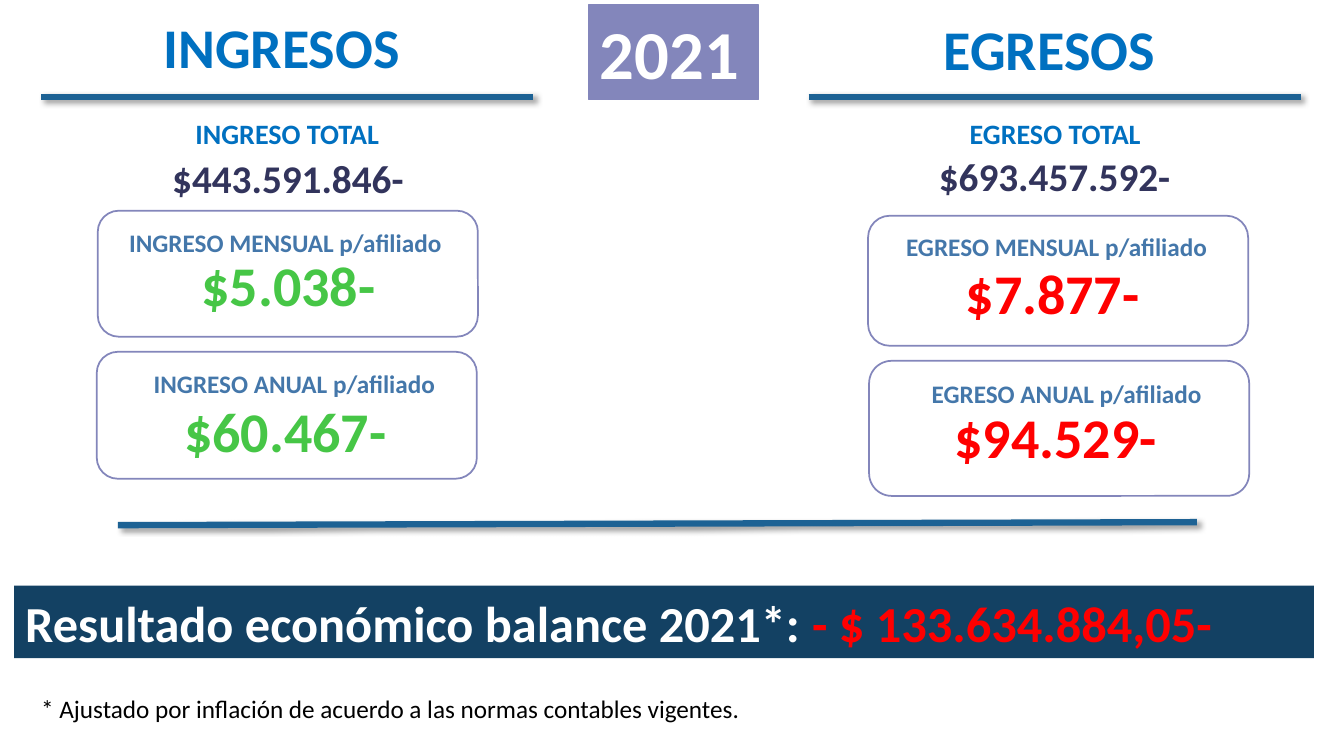
from lxml import etree
from pptx import Presentation
from pptx.dml.color import RGBColor
from pptx.enum.shapes import MSO_CONNECTOR, MSO_SHAPE
from pptx.enum.text import MSO_ANCHOR, MSO_AUTO_SIZE, PP_ALIGN
from pptx.oxml.ns import qn
from pptx.util import Inches, Pt

FONT = "Calibri"
BLUE, NAVY, STEEL, LILAC = "0070C0", "32345C", "4477AA", "8386BB"
RULE, BAND, GREEN, RED = "1D6294", "134163", "46C646", "FF0000"
WHITE, BLACK = "FFFFFF", "000000"
WIDE = (0.11, 0.06)    # horizontal and vertical insets
NARROW = (0.1, 0.05)


def rgb(value):
    return RGBColor.from_string(value)


def write(sp, runs, size, bold=True, align=PP_ALIGN.LEFT, inset=WIDE,
          wrap=True, grow=False):
    """Fill a shape with one paragraph of (text, colour) runs."""
    tf = sp.text_frame
    side, end = (Inches(v) for v in inset)
    frame = {
        "margin_left": side, "margin_right": side,
        "margin_top": end, "margin_bottom": end,
        "word_wrap": wrap, "vertical_anchor": MSO_ANCHOR.TOP,
        "auto_size": MSO_AUTO_SIZE.SHAPE_TO_FIT_TEXT if grow else MSO_AUTO_SIZE.NONE,
    }
    for name, value in frame.items():
        setattr(tf, name, value)
    p = tf.paragraphs[0]
    p.alignment = align
    for text, color in runs:
        r = p.add_run()
        r.text = text
        for name, value in {"name": FONT, "size": Pt(size), "bold": bold}.items():
            setattr(r.font, name, value)
        r.font.color.rgb = rgb(color)


def add_text(shapes, box, text, size, color, **options):
    sp = shapes.add_textbox(*map(Inches, box))
    write(sp, [(text, color)], size, **options)


def add_box(shapes, kind, box, fill=None, line=None, width=0.75):
    sp = shapes.add_shape(kind, *map(Inches, box))
    sp.shadow.inherit = False
    if fill:
        sp.fill.solid()
        sp.fill.fore_color.rgb = rgb(fill)
    else:
        sp.fill.background()
    if line:
        sp.line.color.rgb = rgb(line)
        sp.line.width = Pt(width)
    else:
        sp.line.fill.background()
    return sp


def add_rule(shapes, x1, y1, x2, y2):
    """Thick line with a soft shadow to the lower right."""
    line = shapes.add_connector(MSO_CONNECTOR.STRAIGHT,
                                *map(Inches, (x1, y1, x2, y2)))
    line.line.color.rgb = rgb(RULE)
    line.line.width = Pt(4.5)
    effects = etree.SubElement(line._element.spPr, qn("a:effectLst"))
    shadow = etree.SubElement(effects, qn("a:outerShdw"), blurRad=str(Pt(4)),
                              dist=str(Pt(3)), dir=str(45 * 60000),
                              algn="tl", rotWithShape="0")
    color = etree.SubElement(shadow, qn("a:srgbClr"), val=BLACK)
    etree.SubElement(color, qn("a:alpha"), val="40000")


def add_card(shapes, box, label, label_at, amount, amount_at, color):
    """Rounded outline grouped with a label and an amount."""
    card = shapes.add_group_shape().shapes
    for text, (x, y), height, size, ink in (
            (label, label_at, 0.37, 18, STEEL),
            (amount, amount_at, 0.75, 40, color)):
        add_text(card, (x, y, 5.14, height), text, size, ink,
                 align=PP_ALIGN.CENTER, inset=NARROW)
    add_box(card, MSO_SHAPE.ROUNDED_RECTANGLE, box, line=LILAC, width=1.25)


def add_column(shapes, heading, heading_box, rule_x, total, cards, color):
    """Heading, rule, total and cards of one side of the balance."""
    add_text(shapes, heading_box, heading, 40, BLUE, wrap=False, grow=True)
    add_rule(shapes, rule_x, 0.96, rule_x + 4.88, 0.96)
    label, label_box, amount, amount_box = total
    add_text(shapes, label_box, label, 20, BLUE, align=PP_ALIGN.CENTER)
    add_text(shapes, amount_box, amount, 28, NAVY, align=PP_ALIGN.CENTER)
    for card in cards:
        add_card(shapes, *card, color)


def main():
    prs = Presentation()
    prs.slide_width, prs.slide_height = Inches(13.33), Inches(7.5)
    s = prs.slides.add_slide(prs.slide_layouts[6])

    # Income
    add_column(
        s.shapes, "INGRESOS", (1.51, 0.06, 2.69, 0.79), 0.41,
        ("INGRESO TOTAL", (0.92, 1.1, 3.86, 0.54),
         "$443.591.846-", (0.93, 1.47, 3.85, 0.81)),
        [((0.97, 2.09, 3.77, 1.25), "INGRESO MENSUAL p/afiliado", (0.26, 2.21),
          "$5.038-", (0.29, 2.44)),
         ((0.96, 3.49, 3.77, 1.26), "INGRESO ANUAL p/afiliado", (0.35, 3.6),
          "$60.467-", (0.26, 3.88))],
        GREEN)

    # Expenses
    add_column(
        s.shapes, "EGRESOS", (9.25, 0.08, 2.42, 0.79), 8.02,
        ("EGRESO TOTAL", (8.92, 1.1, 3.09, 0.54),
         "$693.457.592-", (8.61, 1.45, 3.7, 0.81)),
        [((8.61, 2.14, 3.77, 1.29), "EGRESO MENSUAL p/afiliado", (7.91, 2.25),
          "$7.877-", (7.87, 2.52)),
         ((8.62, 3.58, 3.77, 1.34), "EGRESO ANUAL p/afiliado", (8.01, 3.7),
          "$94.529-", (7.9, 3.94))],
        RED)

    # Year
    year = add_box(s.shapes, MSO_SHAPE.RECTANGLE, (5.84, 0.05, 1.68, 0.94),
                   fill=LILAC, line=LILAC)
    write(year, [("2021", WHITE)], 49, wrap=False, grow=True)

    # Result and footnote
    add_rule(s.shapes, 1.17, 5.21, 11.87, 5.18)
    result = add_box(s.shapes, MSO_SHAPE.RECTANGLE, (0.14, 5.81, 12.89, 0.72),
                     fill=BAND)
    write(result, [("Resultado económico balance 2021*: ", WHITE),
                   ("- $ 133.634.884,05-", RED)], 36, grow=True)
    add_text(s.shapes, (0.31, 6.83, 7.17, 0.4),
             "* Ajustado por inflación de acuerdo a las normas contables vigentes.",
             18, BLACK, bold=False, inset=NARROW, wrap=False, grow=True)

    prs.save("out.pptx")


if __name__ == "__main__":
    main()
